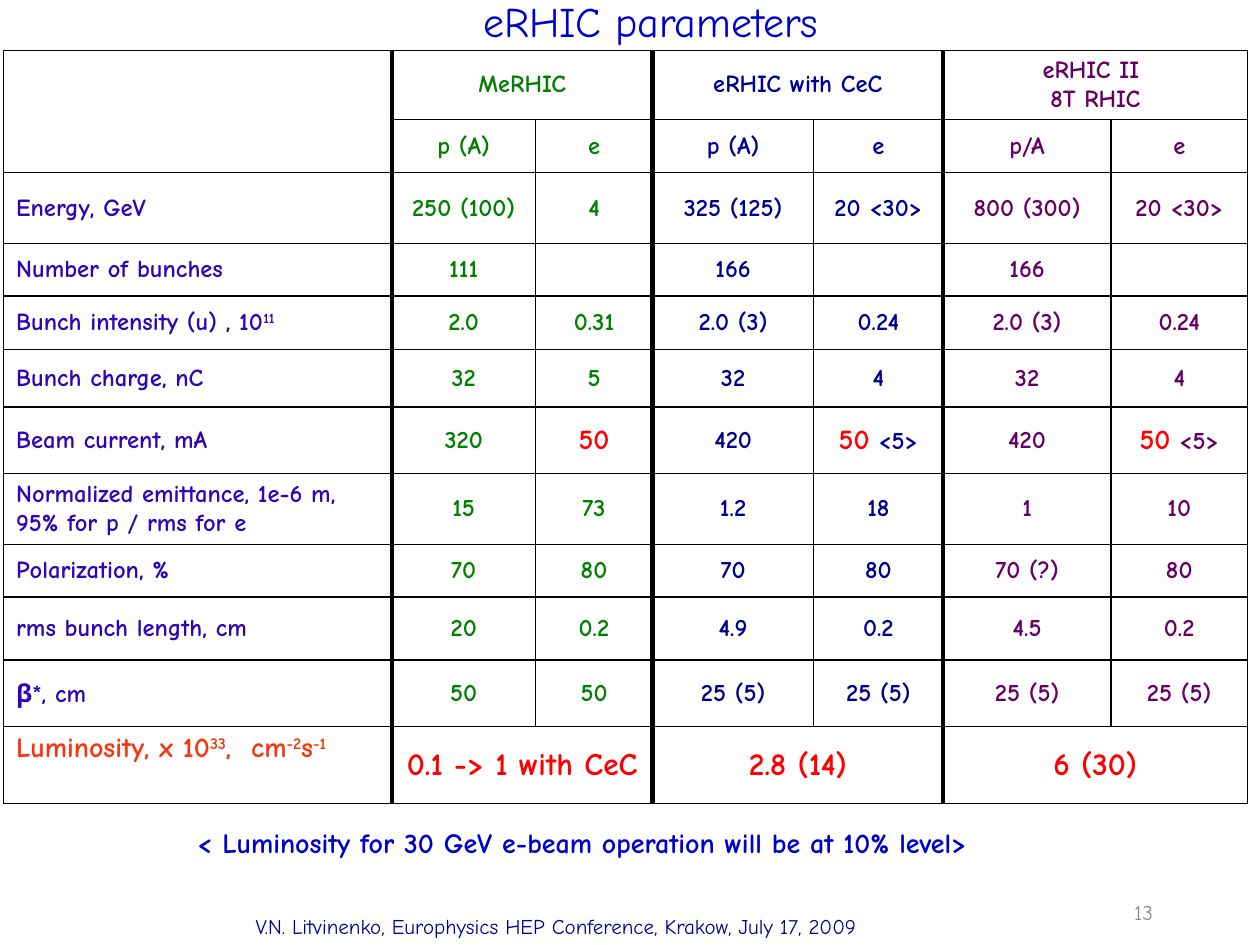
from dataclasses import dataclass

from lxml.etree import SubElement
from pptx import Presentation
from pptx.dml.color import RGBColor
from pptx.enum.text import MSO_ANCHOR as Anchor, PP_ALIGN as Align
from pptx.oxml.ns import qn
from pptx.util import Pt


@dataclass(frozen=True)
class Theme:
    """Colours, fonts and sizes used on the slide."""
    font: str = "Comic Neue"
    greek_font: str = "Open Sans"
    blue: str = "0000CC"
    navy: str = "000090"
    green: str = "008000"
    purple: str = "660066"
    label: str = "2C07B5"
    red: str = "FF0000"
    orange: str = "F7360F"
    grey: str = "8C8C8C"
    line: str = "000000"
    title: int = 24
    result: int = 18
    large: int = 16
    body: int = 14
    small: int = 12
    thin: int = 1
    thick: int = 3


THEME = Theme()

MACHINES = ["MeRHIC", "eRHIC with CeC", "eRHIC II \n8T RHIC"]
BEAMS = ["p (A)", "e", "p (A)", "e", "p/A", "e"]
PARAMETERS = [
    ("Energy, GeV", "250 (100)", "4", "325 (125)", "20 <30>", "800 (300)", "20 <30>"),
    ("Number of bunches", "111", "", "166", "", "166", ""),
    ("Bunch intensity (u) , 10^11", "2.0", "0.31", "2.0 (3)", "0.24", "2.0 (3)", "0.24"),
    ("Bunch charge, nC", "32", "5", "32", "4", "32", "4"),
    ("Beam current, mA", "320", "!50", "420", "!50! <5>", "420", "!50! <5>"),
    ("Normalized emittance, 1e-6 m, 95% for p / rms for e", "15", "73", "1.2", "18", "1", "10"),
    ("Polarization, %", "70", "80", "70", "80", "70 (?)", "80"),
    ("rms bunch length, cm", "20", "0.2", "4.9", "0.2", "4.5", "0.2"),
    ("~β~*, cm", "50", "50", "25 (5)", "25 (5)", "25 (5)", "25 (5)"),
]
LUMINOSITY_LABEL = "Luminosity, x 10^33^,  cm^-2^s^-1"
LUMINOSITY = ["0.1 -> 1 with CeC", "2.8 (14)", "6 (30)"]

COLUMN_COLOURS = [THEME.label] + [c for c in (THEME.green, THEME.navy, THEME.purple) for _ in "pe"]
COLUMN_WIDTHS = [222, 82, 67, 92, 74, 96, 78]
ROW_HEIGHTS = [39, 30.5, 40.5, 30, 30.5, 33, 38, 40.5, 30, 36, 38, 44]
TABLE_LEFT, TABLE_TOP = 2, 28.8

TEXT_BOXES = [
    ("eRHIC parameters", (66, -5.8, 612, 66), THEME.title, THEME.blue, False, Align.CENTER, Anchor.TOP),
    ("13", (516, 503, 150, 36), THEME.small, THEME.grey, False, Align.RIGHT, Anchor.MIDDLE),
    ("< Luminosity for 30 GeV e-beam operation will be at 10% level> ",
     (47, 468, 577, 29), THEME.large, THEME.blue, True, Align.CENTER, Anchor.TOP),
    ("V.N. Litvinenko, Europhysics HEP Conference, Krakow, July 17, 2009",
     (139, 518.4, 428, 22), THEME.small, THEME.navy, False, Align.LEFT, Anchor.TOP),
]


def style(font, size, colour, bold, name=THEME.font):
    font.size, font.bold, font.name = Pt(size), bold, name
    font.color.rgb = RGBColor.from_string(colour)


def add_spans(para, text, size, colour):
    """Add runs, with ^ toggling superscript, ! red emphasis and ~ Greek."""
    active, piece = set(), ""
    for char in text + "\0":
        if char not in "^!~\0":
            piece += char
            continue
        if piece:
            span = para.add_run()
            span.text = piece
            style(span.font,
                  THEME.large if "!" in active else size,
                  THEME.red if "!" in active else colour, True,
                  THEME.greek_font if "~" in active else THEME.font)
            if "^" in active:
                span.font._element.set("baseline", "30000")
        active ^= {char}
        piece = ""


def fill_cell(cell, text, size, colour, align=Align.CENTER, anchor=Anchor.MIDDLE):
    cell.vertical_anchor = anchor
    for index, line in enumerate(text.split("\n")):
        frame = cell.text_frame
        para = frame.add_paragraph() if index else frame.paragraphs[0]
        para.alignment = align
        add_spans(para, line, size, colour)


def draw_borders(cell, column):
    last = column + (cell.span_width if cell.is_merge_origin else 1) - 1
    widths = {
        "lnL": THEME.thick if column in (1, 3, 5) else THEME.thin,
        "lnR": THEME.thick if last in (0, 2, 4) else THEME.thin,
        "lnT": THEME.thin,
        "lnB": THEME.thin,
    }
    properties = cell._tc.get_or_add_tcPr()
    for side, width in widths.items():
        line = SubElement(properties, qn(f"a:{side}"), w=str(Pt(width)))
        SubElement(SubElement(line, qn("a:solidFill")), qn("a:srgbClr"), val=THEME.line)
    cell.fill.background()


def add_parameter_table(page):
    table = page.shapes.add_table(
        len(ROW_HEIGHTS), len(COLUMN_WIDTHS), Pt(TABLE_LEFT), Pt(TABLE_TOP),
        Pt(sum(COLUMN_WIDTHS)), Pt(sum(ROW_HEIGHTS))).table
    table.first_row = table.horz_banding = False
    for column, width in zip(table.columns, COLUMN_WIDTHS):
        column.width = Pt(width)
    for row, height in zip(table.rows, ROW_HEIGHTS):
        row.height = Pt(height)

    last = len(ROW_HEIGHTS) - 1
    table.cell(0, 0).merge(table.cell(1, 0))
    for index, (machine, result) in enumerate(zip(MACHINES, LUMINOSITY)):
        column = 1 + 2 * index
        for row, text, size, colour in (
                (0, machine, THEME.body, COLUMN_COLOURS[column]),
                (last, result, THEME.result, THEME.red)):
            table.cell(row, column).merge(table.cell(row, column + 1))
            fill_cell(table.cell(row, column), text, size, colour)

    for row, values in enumerate([("", *BEAMS), *PARAMETERS], start=1):
        for column, text in enumerate(values):
            if text:
                fill_cell(table.cell(row, column), text, THEME.body, COLUMN_COLOURS[column],
                          Align.CENTER if column else Align.LEFT)
    fill_cell(table.cell(last, 0), LUMINOSITY_LABEL, THEME.large, THEME.orange, Align.LEFT, Anchor.TOP)

    for row in range(len(ROW_HEIGHTS)):
        for column in range(len(COLUMN_WIDTHS)):
            draw_borders(table.cell(row, column), column)


def add_text_box(page, text, bounds, size, colour, bold, align, anchor):
    frame = page.shapes.add_textbox(*map(Pt, bounds)).text_frame
    frame.word_wrap = True
    frame.vertical_anchor = anchor
    frame.text = text
    para = frame.paragraphs[0]
    para.alignment = align
    style(para.runs[0].font, size, colour, bold)


def main():
    deck = Presentation()
    deck.slide_width, deck.slide_height = Pt(720), Pt(540)
    page = deck.slides.add_slide(deck.slide_layouts[6])
    add_parameter_table(page)
    for box in TEXT_BOXES:
        add_text_box(page, *box)
    deck.save("out.pptx")


if __name__ == "__main__":
    main()
